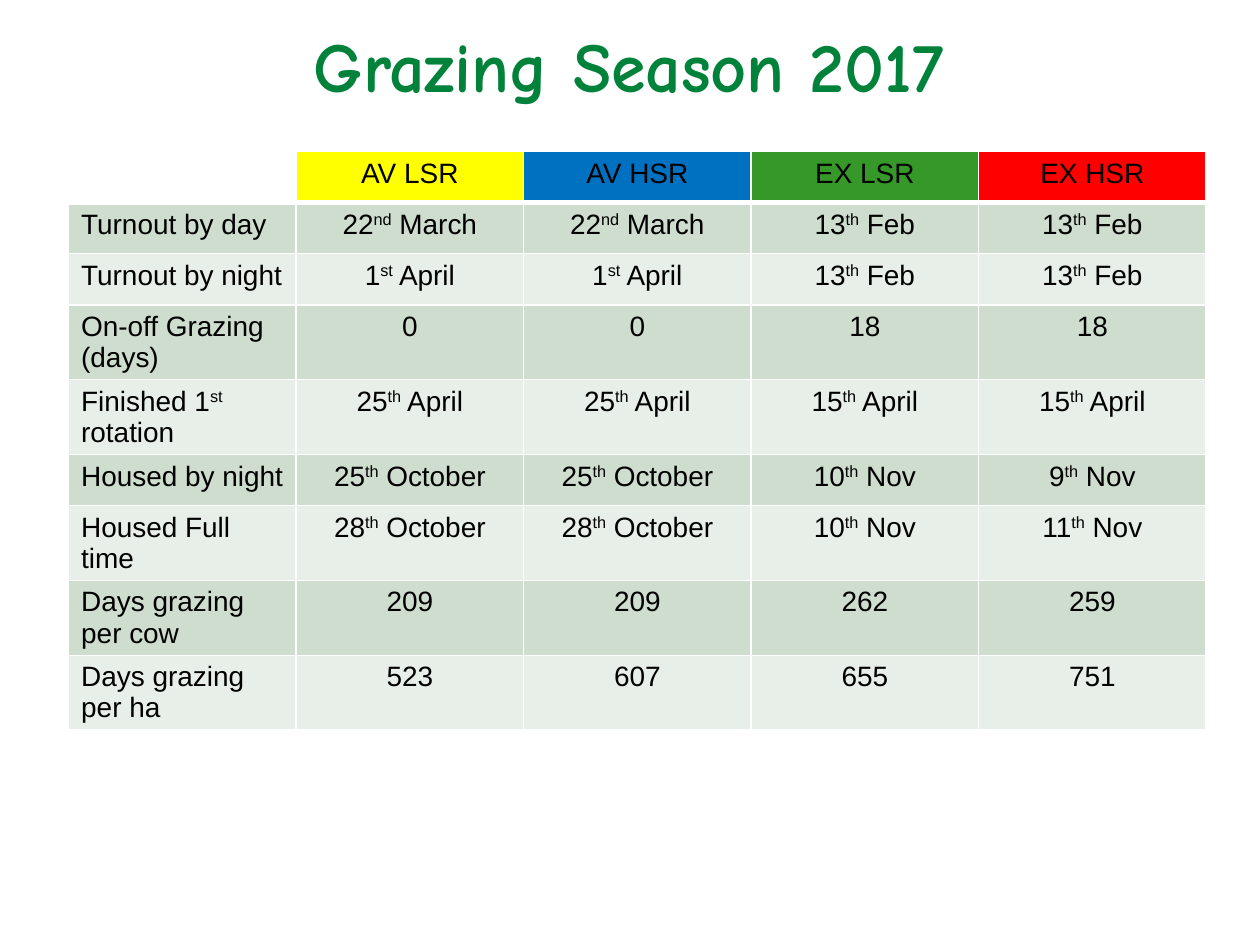
from lxml.etree import SubElement
from pptx import Presentation
from pptx.dml.color import RGBColor
from pptx.enum.text import MSO_ANCHOR, MSO_AUTO_SIZE, PP_ALIGN
from pptx.oxml.ns import qn
from pptx.util import Pt

# Content: text between carets is superscript
TITLE = "Grazing Season 2017"
HEADER = ["", "AV LSR", "AV HSR", "EX LSR", "EX HSR"]
HEADER_FILLS = [None, "FFFF00", "0070C0", "359828", "FF0000"]
BAND_FILLS = ["CEDDCD", "E8EFE8"]
ROWS = [
    ["Turnout by day", "22^nd^ March", "22^nd^ March", "13^th^ Feb", "13^th^ Feb"],
    ["Turnout by night", "1^st^ April", "1^st^ April", "13^th^ Feb", "13^th^ Feb"],
    ["On-off Grazing (days)", "0", "0", "18", "18"],
    ["Finished 1^st^ rotation", "25^th^ April", "25^th^ April", "15^th^ April", "15^th^ April"],
    ["Housed by night", "25^th^ October", "25^th^ October", "10^th^ Nov", "9^th^ Nov"],
    ["Housed Full time", "28^th^ October", "28^th^ October", "10^th^ Nov", "11^th^ Nov"],
    ["Days grazing per cow", "209", "209", "262", "259"],
    ["Days grazing per ha", "523", "607", "655", "751"],
]
COL_WIDTH, ROW_HEIGHT = 130, 29.2


def color(hex_string):
    return RGBColor.from_string(hex_string)


def style_font(font, name, size, hex_string, bold=False):
    font.name, font.size, font.bold = name, Pt(size), bold
    font.color.rgb = color(hex_string)


def set_borders(cell, bottom):
    tc_pr = cell._tc.get_or_add_tcPr()
    for side, width in (("L", 1), ("R", 1), ("T", 1), ("B", bottom)):
        ln = SubElement(tc_pr, qn(f"a:ln{side}"), w=str(Pt(width)))
        SubElement(SubElement(ln, qn("a:solidFill")), qn("a:srgbClr"), val="FFFFFF")


def fill_cell(cell, text, fill, align, bottom):
    set_borders(cell, bottom)
    if fill:
        cell.fill.solid()
        cell.fill.fore_color.rgb = color(fill)
    else:
        cell.fill.background()
    p = cell.text_frame.paragraphs[0]
    p.alignment = align
    style_font(p.font, "Arial", 16, "000000")
    if not text:
        return
    for i, part in enumerate(text.split("^")):
        r = p.add_run()
        r.text = part
        if i % 2:
            r.font._element.set("baseline", "30000")


prs = Presentation()
prs.slide_width, prs.slide_height = Pt(720), Pt(540)
s = prs.slides.add_slide(prs.slide_layouts[5])

# Title
title = s.shapes.title
title.left, title.top, title.width, title.height = Pt(53.3), Pt(13), Pt(612), Pt(36)
tf = title.text_frame
tf.text = TITLE
tf.auto_size = MSO_AUTO_SIZE.NONE
tf.vertical_anchor = MSO_ANCHOR.TOP
tf.margin_left = tf.margin_right = tf.margin_top = tf.margin_bottom = 0
p = tf.paragraphs[0]
p.alignment = PP_ALIGN.CENTER
style_font(p.font, "Comic Neue", 40, "00823B", bold=True)

# Table
grid = [HEADER] + ROWS
table = s.shapes.add_table(
    len(grid), len(HEADER), Pt(39.2), Pt(86.6),
    Pt(COL_WIDTH * len(HEADER)), Pt(ROW_HEIGHT * len(grid))).table
table.first_row = table.horz_banding = False
for column in table.columns:
    column.width = Pt(COL_WIDTH)
for i, texts in enumerate(grid):
    table.rows[i].height = Pt(ROW_HEIGHT)
    for j, text in enumerate(texts):
        fill = BAND_FILLS[(i - 1) % 2] if i else HEADER_FILLS[j]
        align = PP_ALIGN.CENTER if j else PP_ALIGN.LEFT
        fill_cell(table.cell(i, j), text, fill, align, bottom=1 if i else 3)

prs.save("out.pptx")
